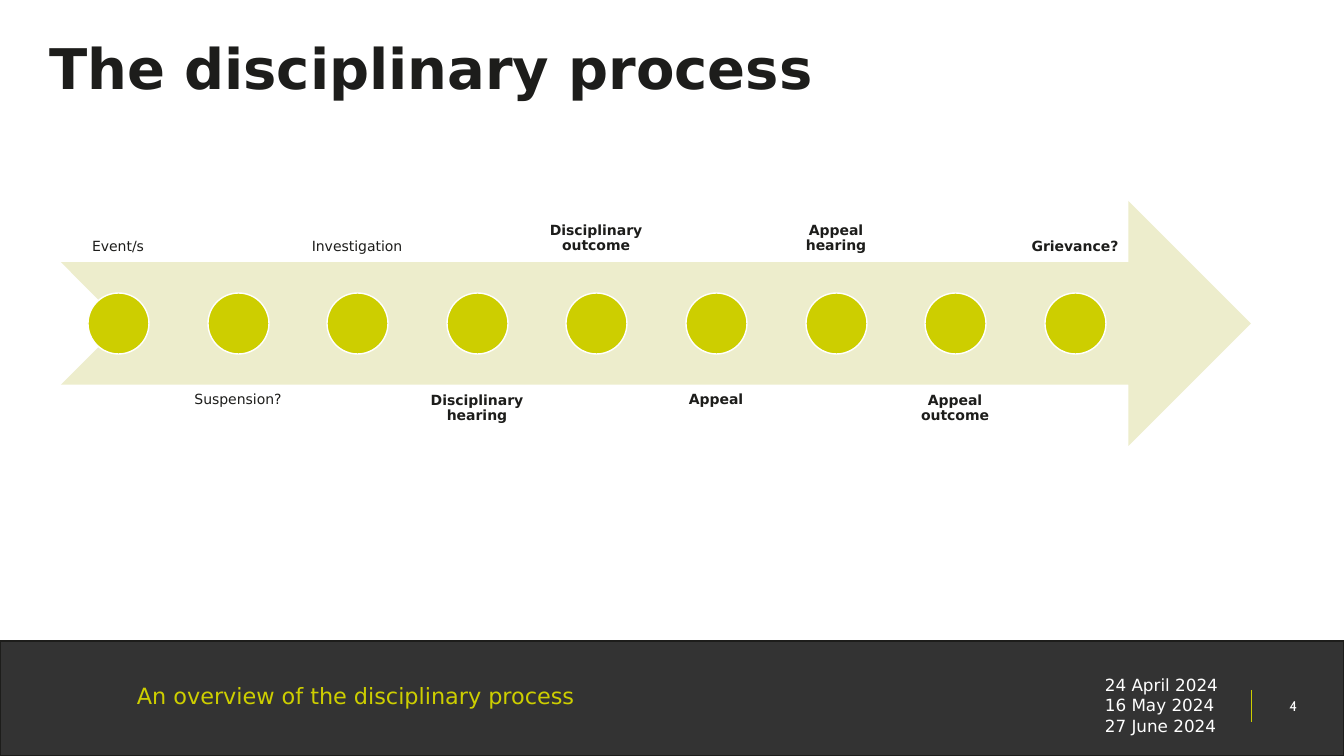
"""Build the disciplinary process timeline slide."""
import pptx
import pptx.dml.color
import pptx.enum.shapes
import pptx.enum.text
import pptx.oxml
import pptx.oxml.ns
import pptx.util

RGB = pptx.dml.color.RGBColor
SHAPE = pptx.enum.shapes.MSO_SHAPE
ALIGN = pptx.enum.text.PP_ALIGN
ANCHOR = pptx.enum.text.MSO_ANCHOR

INK = RGB(0x1D, 0x1D, 0x1B)
LIME = RGB(0xCD, 0xCE, 0x00)
PALE_LIME = RGB(0xED, 0xED, 0xCC)
WHITE = RGB(0xFF, 0xFF, 0xFF)
BLACK = RGB(0x00, 0x00, 0x00)

STEPS = [
    ("Event/s", False),
    ("Suspension?", False),
    ("Investigation", False),
    ("Disciplinary hearing", True),
    ("Disciplinary outcome", True),
    ("Appeal", True),
    ("Appeal hearing", True),
    ("Appeal outcome", True),
    ("Grievance?", True),
]
STEP_PITCH = 119.6


class Deck:
    font = "DejaVu Sans"
    px = 914400 / 100.8

    def __init__(self, width, height):
        self.prs = pptx.Presentation()
        self.prs.slide_width, self.prs.slide_height = self.emu(width, height)
        self.slide = self.prs.slides.add_slide(self.prs.slide_layouts[5])

    def emu(self, *lengths):
        return [pptx.util.Emu(round(n * self.px)) for n in lengths]

    def fill_text(self, sp, lines, size, color, bold=False, align=ALIGN.LEFT,
                  anchor=ANCHOR.TOP, spacing=1.0, font=None, inset=None):
        tf = sp.text_frame
        tf.word_wrap = True
        tf.vertical_anchor = anchor
        if inset is not None:
            tf.margin_left, tf.margin_top, tf.margin_right, tf.margin_bottom = self.emu(*[inset] * 4)
        for i, line in enumerate(lines):
            p = tf.add_paragraph() if i else tf.paragraphs[0]
            p.text = line
            p.alignment = align
            p.line_spacing = spacing
            p.font.name = font or self.font
            p.font.size = pptx.util.Pt(size)
            p.font.bold = bold
            p.font.color.rgb = color

    def title(self, box, text):
        sp = self.slide.shapes.title
        sp.left, sp.top, sp.width, sp.height = self.emu(*box)
        self.fill_text(sp, [text], 40, INK, bold=True)

    def text(self, box, lines, size, color, **style):
        sp = self.slide.shapes.add_textbox(*self.emu(*box))
        self.fill_text(sp, lines, size, color, **style)

    def shape(self, kind, box, fill, line=None, alpha=None):
        sp = self.slide.shapes.add_shape(kind, *self.emu(*box))
        sp.shadow.inherit = False
        sp.fill.solid()
        sp.fill.fore_color.rgb = fill
        if alpha is not None:
            color = sp._element.spPr.find(".//" + pptx.oxml.ns.qn("a:srgbClr"))
            color.append(pptx.oxml.parse_xml(
                f'<a:alpha {pptx.oxml.ns.nsdecls("a")} val="{alpha * 1000}"/>'))
        if line is None:
            sp.line.fill.background()
        else:
            sp.line.color.rgb = line
            sp.line.width = pptx.util.Pt(1)

    def line(self, x1, y1, x2, y2, color, width):
        cx = self.slide.shapes.add_connector(
            pptx.enum.shapes.MSO_CONNECTOR.STRAIGHT, *self.emu(x1, y1, x2, y2))
        cx.line.color.rgb = color
        cx.line.width = pptx.util.Pt(width)
        cx._element.spPr.append(pptx.oxml.parse_xml(
            f'<a:effectLst {pptx.oxml.ns.nsdecls("a")}/>'))


def main():
    deck = Deck(1344, 756)
    deck.shape(SHAPE.RECTANGLE, (0, 641, 1344, 115), BLACK, line=INK, alpha=80)
    deck.line(1251, 690, 1251, 722, LIME, 0.5)
    deck.text((1252, 696, 55, 23), ["4"], 10, WHITE, align=ALIGN.RIGHT,
              anchor=ANCHOR.MIDDLE, spacing=0.8, font="Cabin")
    deck.title((39, 28, 1025, 78), "The disciplinary process")

    deck.shape(SHAPE.NOTCHED_RIGHT_ARROW, (61, 201, 1190, 245), PALE_LIME)
    for i, (label, bold) in enumerate(STEPS):
        offset = round(i * STEP_PITCH)
        top, anchor = (385, ANCHOR.TOP) if i % 2 else (17, ANCHOR.BOTTOM)
        deck.text((61 + offset, top, 114, 245), [label], 10, INK, bold=bold,
                  align=ALIGN.CENTER, anchor=anchor, spacing=0.9, inset=8)
        deck.shape(SHAPE.OVAL, (88 + offset, 293, 61, 61), LIME, line=WHITE)

    deck.text((127, 663, 605, 66), ["An overview of the disciplinary process"],
              16, LIME, anchor=ANCHOR.MIDDLE)
    deck.text((1095, 670, 167, 72),
              ["24 April 2024", "16 May 2024", "27 June 2024"], 12, WHITE)
    deck.prs.save("out.pptx")


if __name__ == "__main__":
    main()
